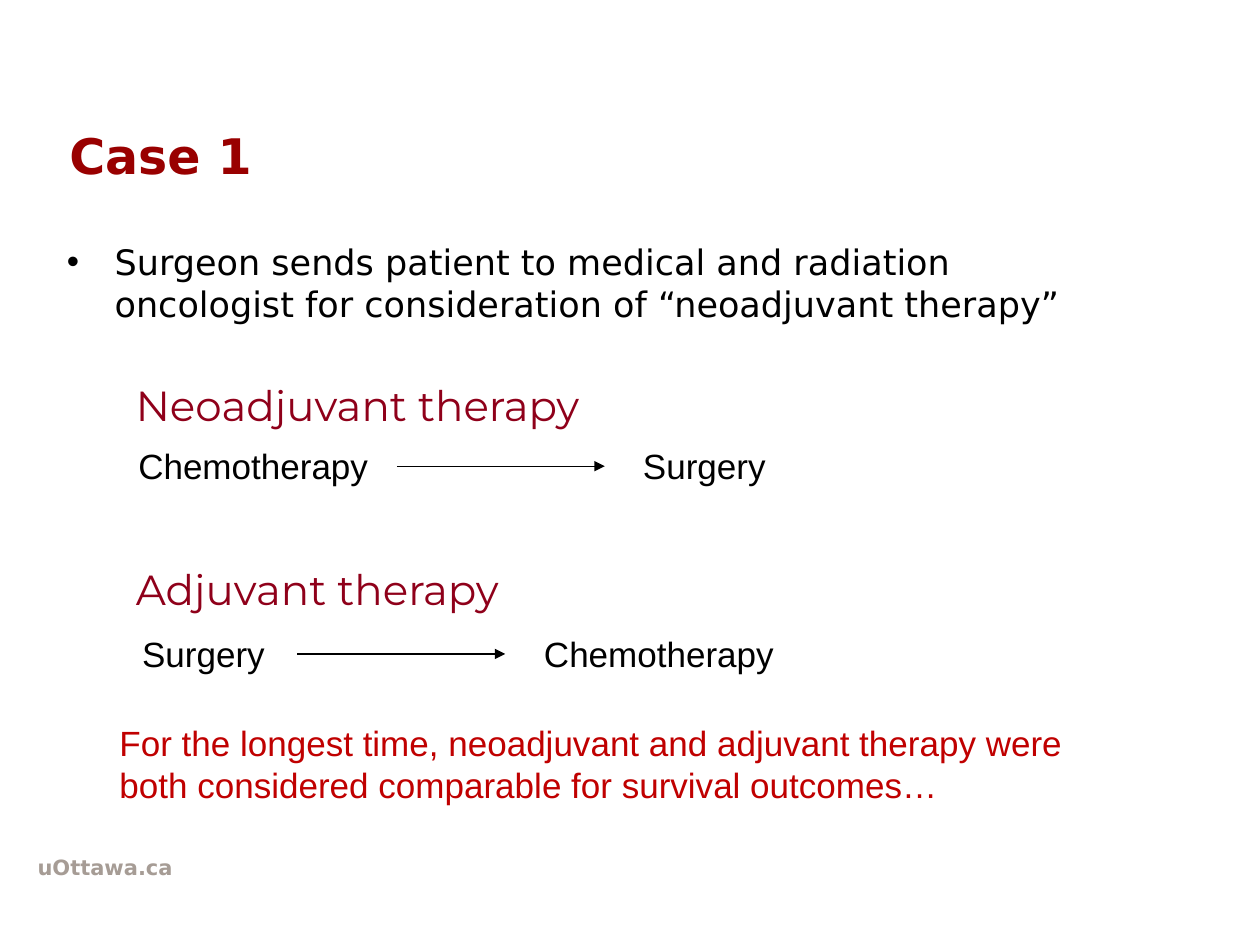
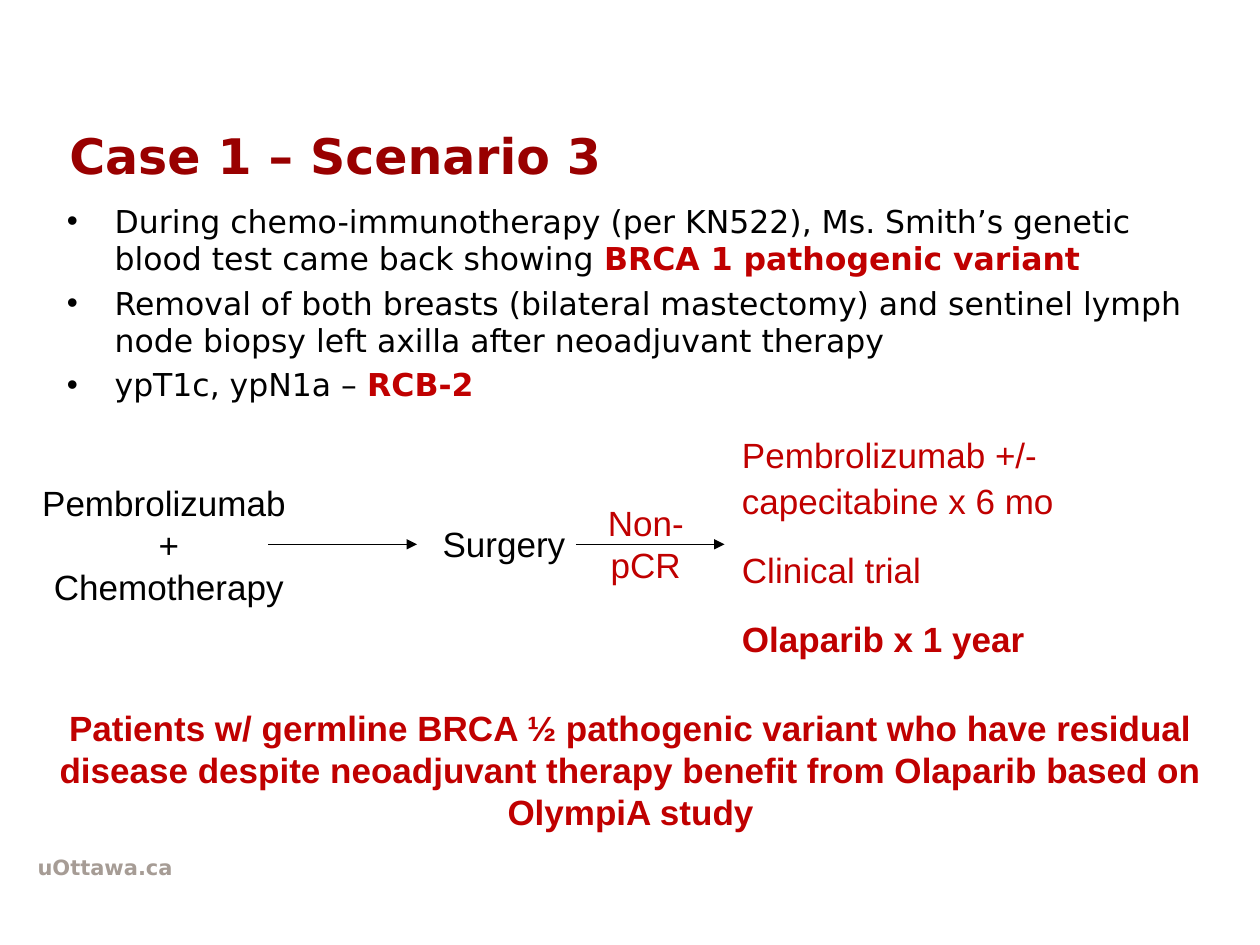
"""Builds two slides on neoadjuvant and adjuvant therapy for Case 1."""
from lxml.etree import SubElement
from pptx import Presentation
from pptx.dml.color import RGBColor
from pptx.enum.shapes import MSO_CONNECTOR
from pptx.enum.text import MSO_ANCHOR, MSO_AUTO_SIZE, PP_ALIGN
from pptx.oxml.ns import qn
from pptx.util import Pt

PX = 9144
BLACK = RGBColor(0x00, 0x00, 0x00)
TITLE_RED = RGBColor(0x99, 0x00, 0x00)
GARNET = RGBColor(0x8F, 0x00, 0x1A)
RED = RGBColor(0xC0, 0x00, 0x00)
GREY = RGBColor(0xA6, 0x9C, 0x95)
SANS, ARIAL, MONT = "DejaVu Sans", "Arial", "Montserrat"
LEFT, CENTER = PP_ALIGN.LEFT, PP_ALIGN.CENTER


def write(sp, box, paras, size=20, font=ARIAL, color=BLACK, bold=False,
          align=LEFT, gap=0, spacing=None):
    """Place a shape and fill it; a paragraph is a list of (text, color, bold) runs or a string."""
    sp.left, sp.top, sp.width, sp.height = [v * PX for v in box]
    tf = sp.text_frame
    tf.word_wrap = True
    tf.auto_size = MSO_AUTO_SIZE.NONE
    for i, para in enumerate(paras):
        p = tf.add_paragraph() if i else tf.paragraphs[0]
        p.alignment = align
        p.space_before = Pt(gap if i else 0)
        if spacing:
            p.line_spacing = spacing
        runs = [(para, color, bold)] if isinstance(para, str) else para
        for text, run_color, run_bold in runs:
            r = p.add_run()
            r.text = text
            r.font.size = Pt(size)
            r.font.name = font
            r.font.bold = run_bold
            r.font.color.rgb = run_color
    return sp


def arrow(s, x1, x2, y, start=None):
    """Draw a horizontal arrow, joined to the right side of start if given."""
    c = s.shapes.add_connector(MSO_CONNECTOR.STRAIGHT, x1 * PX, y * PX, x2 * PX, y * PX)
    c.line.color.rgb = BLACK
    c.line.width = Pt(0.75)
    SubElement(c.line._get_or_add_ln(), qn("a:tailEnd"), type="triangle")
    SubElement(c._element.spPr, qn("a:effectLst"))
    if start is not None:
        c.begin_connect(start, 3)


prs = Presentation()
prs.slide_width, prs.slide_height = 1000 * PX, 750 * PX

pages = [
    ("Case 1", (43, 186, 850, 410), 20, [
        "Surgeon sends patient to medical and radiation oncologist for consideration of “neoadjuvant therapy”",
    ]),
    ("Case 1 – Scenario 3", (43, 155, 912, 410), 18, [
        [("During chemo-immunotherapy (per KN522), Ms. Smith’s genetic blood test came back showing ", BLACK, False),
         ("BRCA 1 pathogenic variant", RED, True)],
        "Removal of both breasts (bilateral mastectomy) and sentinel lymph node biopsy left axilla after neoadjuvant therapy",
        [("ypT1c, ypN1a – ", BLACK, False), ("RCB-2", RED, True)],
    ]),
]
slides = []
for title, body_box, body_size, bullets in pages:
    s = prs.slides.add_slide(prs.slide_layouts[1])
    slides.append(s)
    write(s.shapes.add_textbox(0, 0, 0, 0), (20, 673, 496, 39), ["uOttawa.ca"], 12, SANS, GREY, True)
    write(s.shapes.title, (45, 76, 850, 94), [title], 28, SANS, TITLE_RED, True)
    s.shapes.title.text_frame.vertical_anchor = MSO_ANCHOR.MIDDLE
    body = write(s.placeholders[1], body_box, bullets, body_size, SANS, gap=body_size / 5)
    for p in body.text_frame.paragraphs:
        pPr = p._p.get_or_add_pPr()
        pPr.set("marL", str(38 * PX))
        pPr.set("indent", str(-38 * PX))

s = slides[0]
therapies = [
    ("Neoadjuvant therapy", 296, 348, ("Chemotherapy", 228), ("Surgery", 142), 488),
    ("Adjuvant therapy", 442, 497, ("Surgery", 149), ("Chemotherapy", 228), 409),
]
for name, name_y, y, (first, first_w), (second, second_w), second_x in therapies:
    start = write(s.shapes.add_textbox(0, 0, 0, 0), (87, y, first_w, 44), [first], align=CENTER)
    arrow(s, 87 + first_w, second_x - 8, y + 22, start)
    write(s.shapes.add_textbox(0, 0, 0, 0), (second_x, y, second_w, 44), [second], align=CENTER)
    write(s.shapes.add_textbox(0, 0, 0, 0), (98, name_y, 433, 50), [name], 24, MONT, GARNET)
write(s.shapes.add_textbox(0, 0, 0, 0), (85, 568, 807, 77), [
    "For the longest time, neoadjuvant and adjuvant therapy were both considered comparable for survival outcomes…",
], color=RED)

s = slides[1]
steps = [
    ((457, 393, 111, 77), ["Non- pCR"], RED),
    ((20, 377, 228, 111), ["Pembrolizumab ", "+", "Chemotherapy"], BLACK),
    ((329, 410, 142, 44), ["Surgery"], BLACK),
]
for box, lines, color in steps:
    write(s.shapes.add_textbox(0, 0, 0, 0), box, lines, color=color, align=CENTER)
for x in (213, 457):
    arrow(s, x, x + 118, 432)
write(s.shapes.add_textbox(0, 0, 0, 0), (579, 336, 402, 200), [
    "Pembrolizumab +/- capecitabine x 6 mo",
    "Clinical trial",
    [("Olaparib x 1 year", RED, True)],
], color=RED, gap=13, spacing=1.1)
write(s.shapes.add_textbox(0, 0, 0, 0), (28, 556, 945, 111), [
    "Patients w/ germline BRCA ½ pathogenic variant who have residual disease despite "
    "neoadjuvant therapy benefit from Olaparib based on OlympiA study",
], color=RED, bold=True, align=CENTER)

prs.save("out.pptx")
